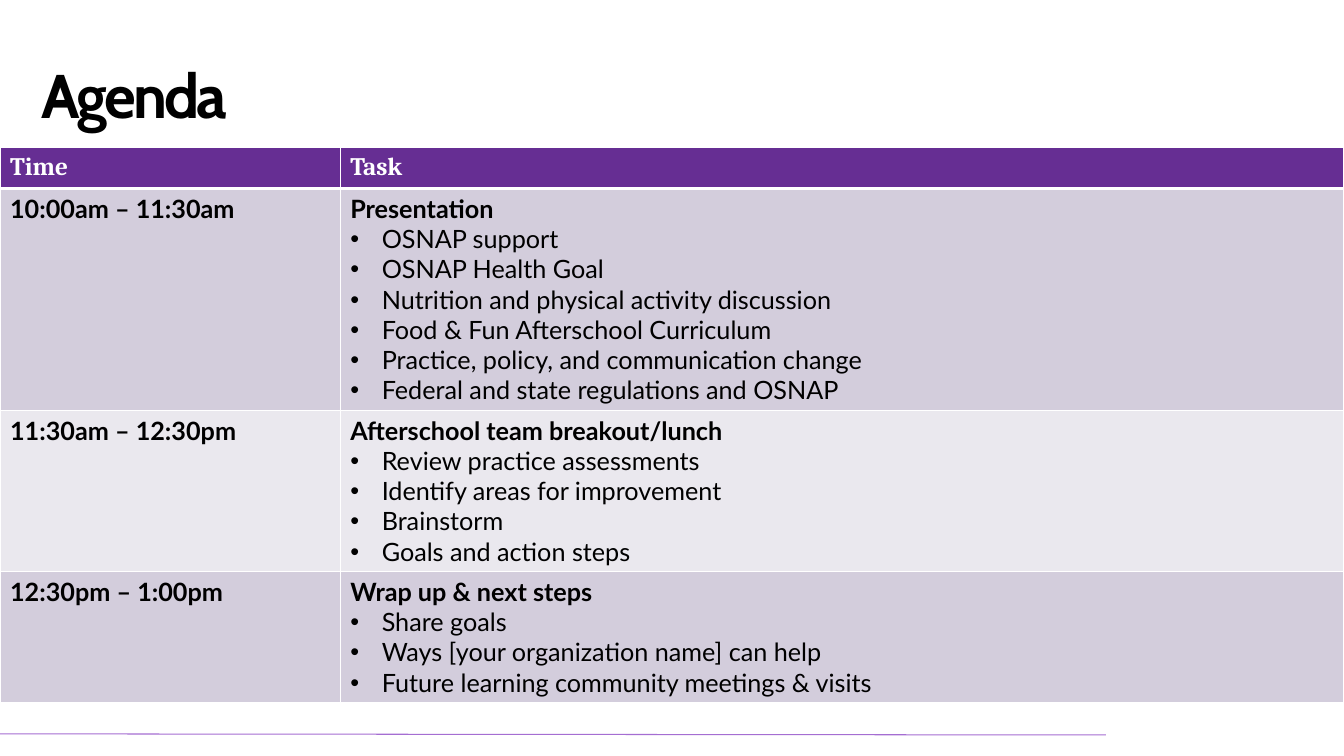
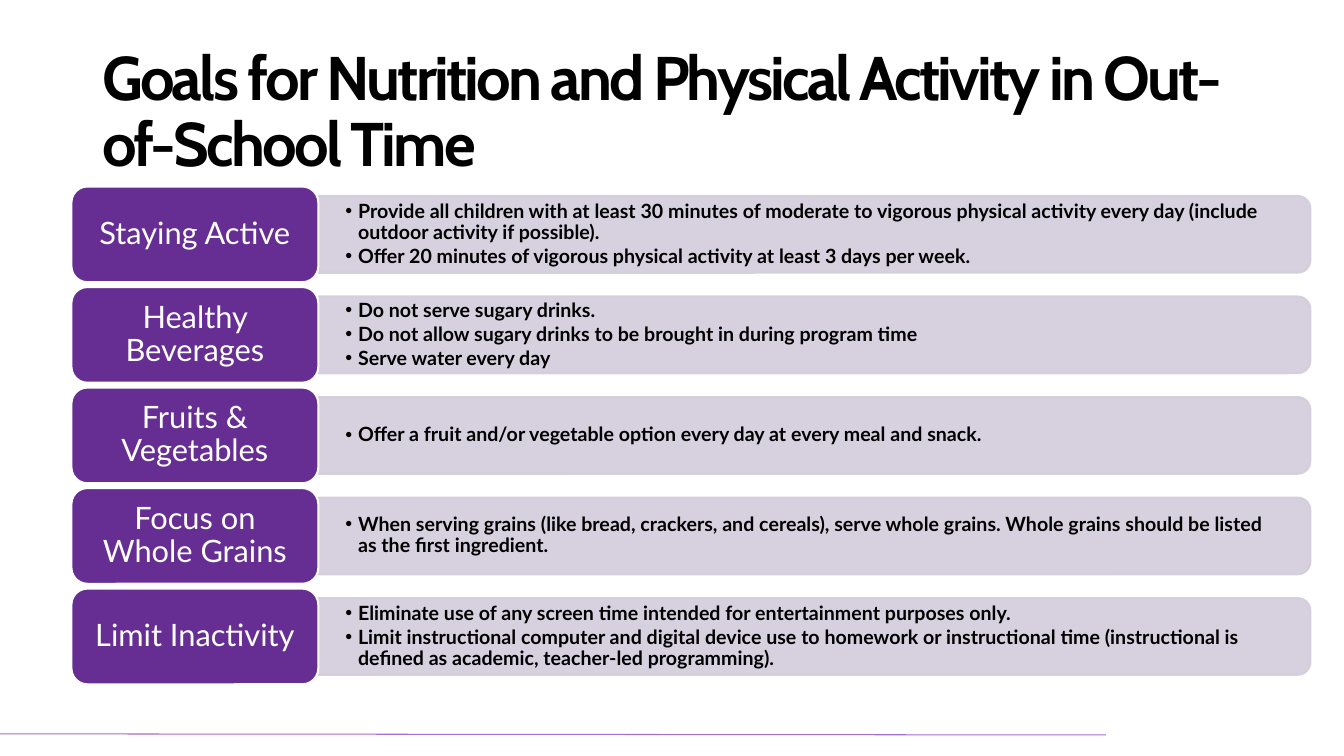
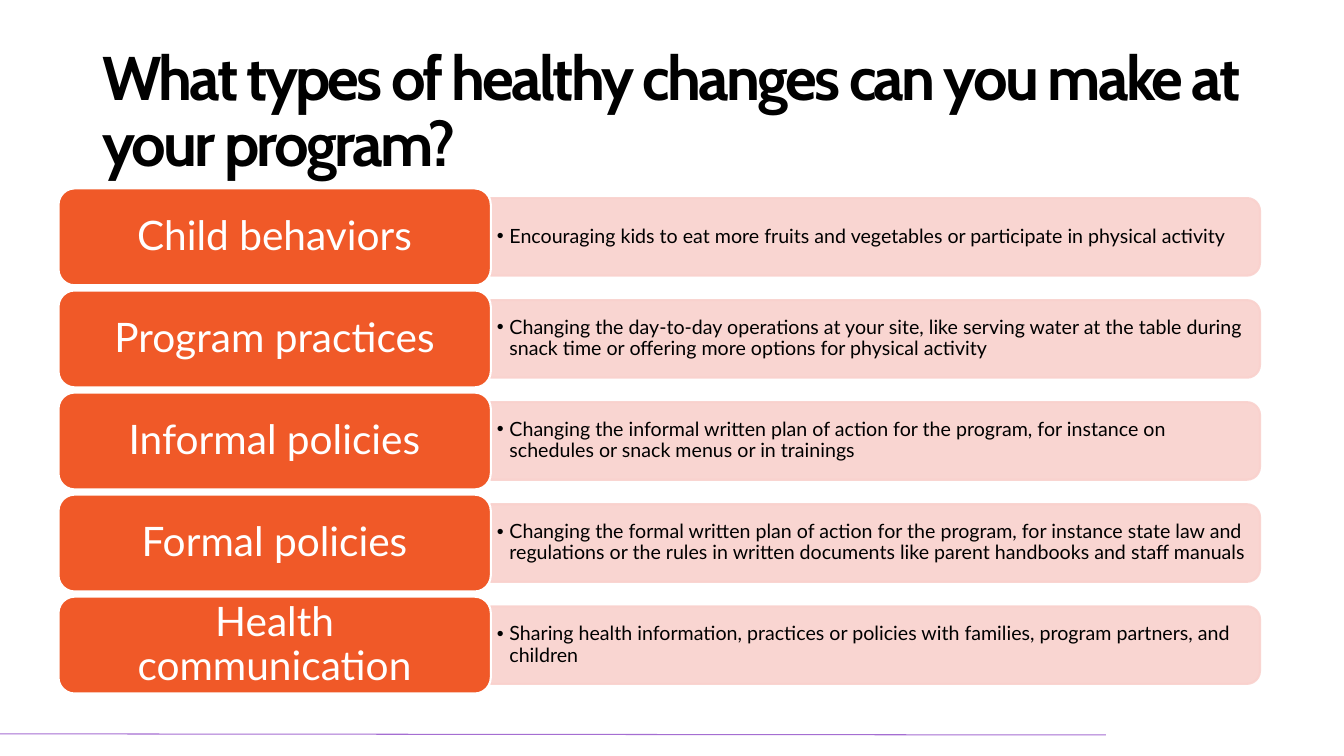
from lxml import etree
from pptx import Presentation
from pptx.dml.color import RGBColor
from pptx.enum.shapes import MSO_CONNECTOR, MSO_SHAPE
from pptx.enum.text import MSO_ANCHOR, PP_ALIGN
from pptx.oxml.ns import qn
from pptx.util import Pt

STRAIGHT = MSO_CONNECTOR.STRAIGHT
ROUNDED, ROUNDED_ENDS = MSO_SHAPE.ROUNDED_RECTANGLE, MSO_SHAPE.ROUND_2_SAME_RECTANGLE
MIDDLE, TOP = MSO_ANCHOR.MIDDLE, MSO_ANCHOR.TOP
LEFT, CENTER = PP_ALIGN.LEFT, PP_ALIGN.CENTER

# Shared colours and text styles
BLACK, WHITE = "000000", "FFFFFF"
PURPLE, ORANGE, FOOTER = "662E93", "F05928", "A56ED2"
LILAC, PALE_LILAC, PINK = "D3CDDC", "EAE8EE", "F9D1CD"

TITLE = {"name": "Cabin", "size": Pt(44), "bold": True}
TABLE_HEAD = {"name": "Cambria", "size": Pt(18), "bold": True}
TABLE_STRONG = {"name": "Lato", "size": Pt(18), "bold": True}
TABLE_ITEM = {**TABLE_STRONG, "bold": False}
DETAIL = {"name": "Lato", "size": Pt(14), "bold": False}
DETAIL_STRONG = {**DETAIL, "bold": True}
LABEL = {"name": "Lato", "size": Pt(22), "bold": False}
LABEL_LARGE = {**LABEL, "size": Pt(29)}


def rgb(color):
    return RGBColor.from_string(color)


class Deck:
    """Holds the presentation, its style and the current slide."""

    def __init__(self):
        self.presentation = Presentation()
        self.presentation.slide_width = Pt(960)
        self.presentation.slide_height = Pt(540)
        self.slide = None

    def add_slide(self, title, left=66, top=28.8):
        self.slide = self.presentation.slides.add_slide(self.presentation.slide_layouts[6])
        self.footer_line()
        frame = self.text_box(left, top, 828, 104.4, (7.2, 3.6))
        run = self.add_text(frame.paragraphs[0], title, TITLE, spacing=0.9)
        run._r.get_or_add_rPr().set("spc", "-200")

    def footer_line(self):
        line = self.slide.shapes.add_connector(STRAIGHT, Pt(790), Pt(525), 0, Pt(524.2))
        line.line.color.rgb = rgb(FOOTER)
        line.line.width = Pt(0.75)
        etree.SubElement(line._element.spPr, qn("a:effectLst"))

    def set_frame(self, frame, insets):
        horizontal, vertical = (Pt(inset) for inset in insets)
        settings = {"word_wrap": True, "vertical_anchor": MIDDLE,
                    "margin_left": horizontal, "margin_right": horizontal,
                    "margin_top": vertical, "margin_bottom": vertical}
        for name, value in settings.items():
            setattr(frame, name, value)
        return frame

    def text_box(self, left, top, width, height, insets):
        box = self.slide.shapes.add_textbox(Pt(left), Pt(top), Pt(width), Pt(height))
        return self.set_frame(box.text_frame, insets)

    def add_text(self, paragraph, text, style, color=BLACK, align=LEFT, spacing=1.0, indent=0, after=0):
        if indent:
            properties = paragraph._p.get_or_add_pPr()
            properties.set("marL", str(Pt(indent)))
            properties.set("indent", str(-Pt(indent)))
            etree.SubElement(properties, qn("a:buFont"), typeface="Arial")
            etree.SubElement(properties, qn("a:buChar"), char="•")
        settings = {"alignment": align, "line_spacing": spacing, "space_after": Pt(after)}
        for name, value in settings.items():
            setattr(paragraph, name, value)
        run = paragraph.add_run()
        run.text = text
        for name, value in style.items():
            setattr(run.font, name, value)
        run.font.color.rgb = rgb(color)
        return run

    def add_list(self, frame, items, style, **options):
        for index, item in enumerate(items):
            paragraph = frame.add_paragraph() if index else frame.paragraphs[0]
            self.add_text(paragraph, item, style, **options)

    def shape(self, kind, left, top, width, height, fill, line, opacity=100):
        shape = self.slide.shapes.add_shape(kind, Pt(left), Pt(top), Pt(width), Pt(height))
        shape.shadow.inherit = False
        shape.fill.solid()
        shape.fill.fore_color.rgb = rgb(fill)
        shape.line.color.rgb = rgb(line)
        shape.line.width = Pt(1.5)
        if opacity < 100:
            for color in shape._element.spPr.iter(qn("a:srgbClr")):
                etree.SubElement(color, qn("a:alpha"), val=str(opacity * 1000))
        return shape

    def panel(self, left, top, width, height, color, items, style, insets):
        # The preset is upright, so it is turned about its centre
        shape = self.shape(ROUNDED_ENDS, left + (width - height) / 2, top + (height - width) / 2,
                           height, width, color, color, opacity=90)
        shape.rotation = 90
        frame = self.text_box(left, top, width, height, insets)
        self.add_list(frame, items, style, spacing=0.9, indent=9, after=2.1)

    def label(self, left, top, width, height, color, text, style, inset):
        shape = self.shape(ROUNDED, left, top, width, height, color, WHITE)
        frame = self.set_frame(shape.text_frame, (inset, 3.6))
        self.add_text(frame.paragraphs[0], text, style, WHITE, CENTER, 0.9)

    def block_list(self, rows, left, top, pitch, label_size, panel_size, colors, styles, insets):
        label_width, label_height = label_size
        panel_width, panel_height = panel_size
        for index, (name, items) in enumerate(rows):
            row_top = top + index * pitch
            panel_top = row_top + (label_height - panel_height) / 2
            self.panel(left + label_width, panel_top, panel_width, panel_height,
                       colors[1], items, styles[1], insets[1])
            self.label(left, row_top, label_width, label_height,
                       colors[0], name, styles[0], insets[0])

    def cell(self, cell, fill, top_border=1, bottom_border=1):
        properties = cell._tc.get_or_add_tcPr()
        borders = {"a:lnL": 1, "a:lnR": 1, "a:lnT": top_border, "a:lnB": bottom_border}
        for tag, width in borders.items():
            border = etree.SubElement(properties, qn(tag), w=str(Pt(width)))
            solid = etree.SubElement(border, qn("a:solidFill"))
            etree.SubElement(solid, qn("a:srgbClr"), val=WHITE)
        cell.fill.solid()
        cell.fill.fore_color.rgb = rgb(fill)
        cell.vertical_anchor = TOP
        return cell.text_frame

    def agenda_table(self, top, widths, heights, header, rows):
        table = self.slide.shapes.add_table(
            len(heights), len(widths), 0, Pt(top), Pt(sum(widths)), Pt(sum(heights))).table
        table.horz_banding = False
        for column, width in zip(table.columns, widths):
            column.width = Pt(width)
        for row, height in zip(table.rows, heights):
            row.height = Pt(height)
        for column, text in enumerate(header):
            frame = self.cell(table.cell(0, column), PURPLE, bottom_border=3)
            self.add_text(frame.paragraphs[0], text, TABLE_HEAD, WHITE)
        for index, (time, task, items) in enumerate(rows, 1):
            fill = LILAC if index % 2 else PALE_LILAC
            for column, text in enumerate((time, task)):
                frame = self.cell(table.cell(index, column), fill, 3 if index == 1 else 1)
                self.add_text(frame.paragraphs[0], text, TABLE_STRONG)
            for item in items:
                self.add_text(frame.add_paragraph(), item, TABLE_ITEM, indent=22.5)


AGENDA = [
    ("10:00am – 11:30am", "Presentation", [
        "OSNAP support",
        "OSNAP Health Goal",
        "Nutrition and physical activity discussion",
        "Food & Fun Afterschool Curriculum",
        "Practice, policy, and communication change",
        "Federal and state regulations and OSNAP"]),
    ("11:30am – 12:30pm", "Afterschool team breakout/lunch", [
        "Review practice assessments",
        "Identify areas for improvement",
        "Brainstorm",
        "Goals and action steps"]),
    ("12:30pm – 1:00pm", "Wrap up & next steps", [
        "Share goals",
        "Ways [your organization name] can help",
        "Future learning community meetings & visits"]),
]

GOALS = [
    ("Staying Active", [
        "Provide all children with at least 30 minutes of moderate to vigorous physical activity "
        "every day (include outdoor activity if possible).",
        "Offer 20 minutes of vigorous physical activity at least 3 days per week."]),
    ("Healthy Beverages", [
        "Do not serve sugary drinks.",
        "Do not allow sugary drinks to be brought in during program time",
        "Serve water every day"]),
    ("Fruits & Vegetables", [
        "Offer a fruit and/or vegetable option every day at every meal and snack."]),
    ("Focus on Whole Grains", [
        "When serving grains (like bread, crackers, and cereals), serve whole grains. "
        "Whole grains should be listed as the first ingredient."]),
    ("Limit Inactivity", [
        "Eliminate use of any screen time intended for entertainment purposes only.",
        "Limit instructional computer and digital device use to homework or instructional time "
        "(instructional is defined as academic, teacher-led programming)."]),
]

CHANGES = [
    ("Child behaviors", [
        "Encouraging kids to eat more fruits and vegetables or participate in physical activity"]),
    ("Program practices", [
        "Changing the day-to-day operations at your site, like serving water at the table during "
        "snack time or offering more options for physical activity"]),
    ("Informal policies", [
        "Changing the informal written plan of action for the program, for instance on schedules "
        "or snack menus or in trainings"]),
    ("Formal policies", [
        "Changing the formal written plan of action for the program, for instance state law and "
        "regulations or the rules in written documents like parent handbooks and staff manuals"]),
    ("Health communication", [
        "Sharing health information, practices or policies with families, program partners, "
        "and children"]),
]


def main():
    deck = Deck()

    # Agenda
    deck.add_slide("Agenda", left=22.3, top=18)
    deck.agenda_table(105.4, (243, 717), (29.2, 158.4, 115.2, 93.6), ("Time", "Task"), AGENDA)

    # Goals
    deck.add_slide("Goals for Nutrition and Physical Activity in Out-of-School Time")
    deck.block_list(GOALS, 51, 133.2, 71.8, (176.4, 68.4), (708.6, 54.8),
                    (PURPLE, LILAC), (LABEL, DETAIL_STRONG), (9.5, (19.4, 0)))

    # Healthy changes
    deck.add_slide("What types of healthy changes can you make at your program?")
    deck.block_list(CHANGES, 41.8, 134.6, 72.9, (308.8, 69.2), (549.4, 55.4),
                    (ORANGE, PINK), (LABEL_LARGE, DETAIL), (12, (4.3, 0)))

    deck.presentation.save("out.pptx")


if __name__ == "__main__":
    main()
